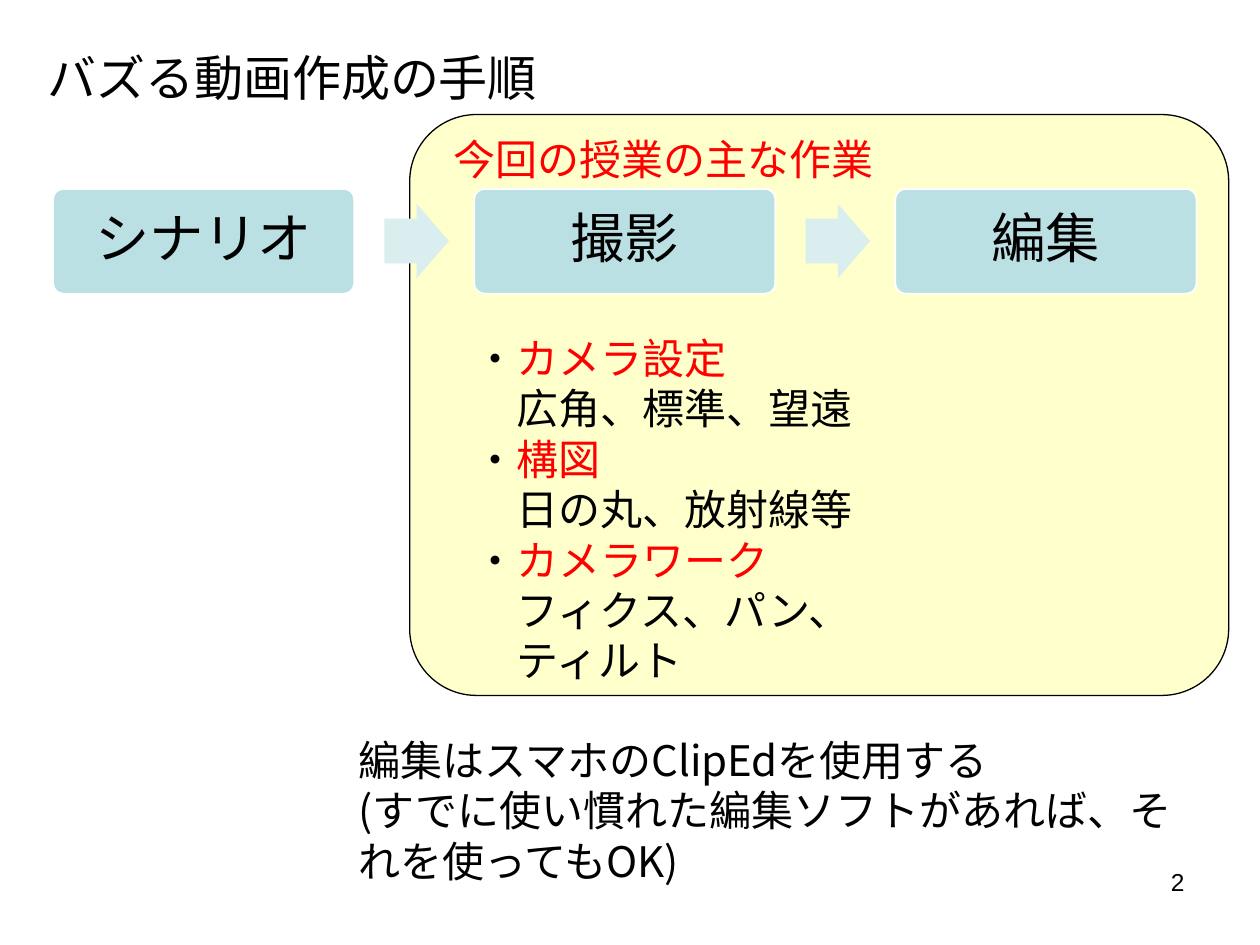
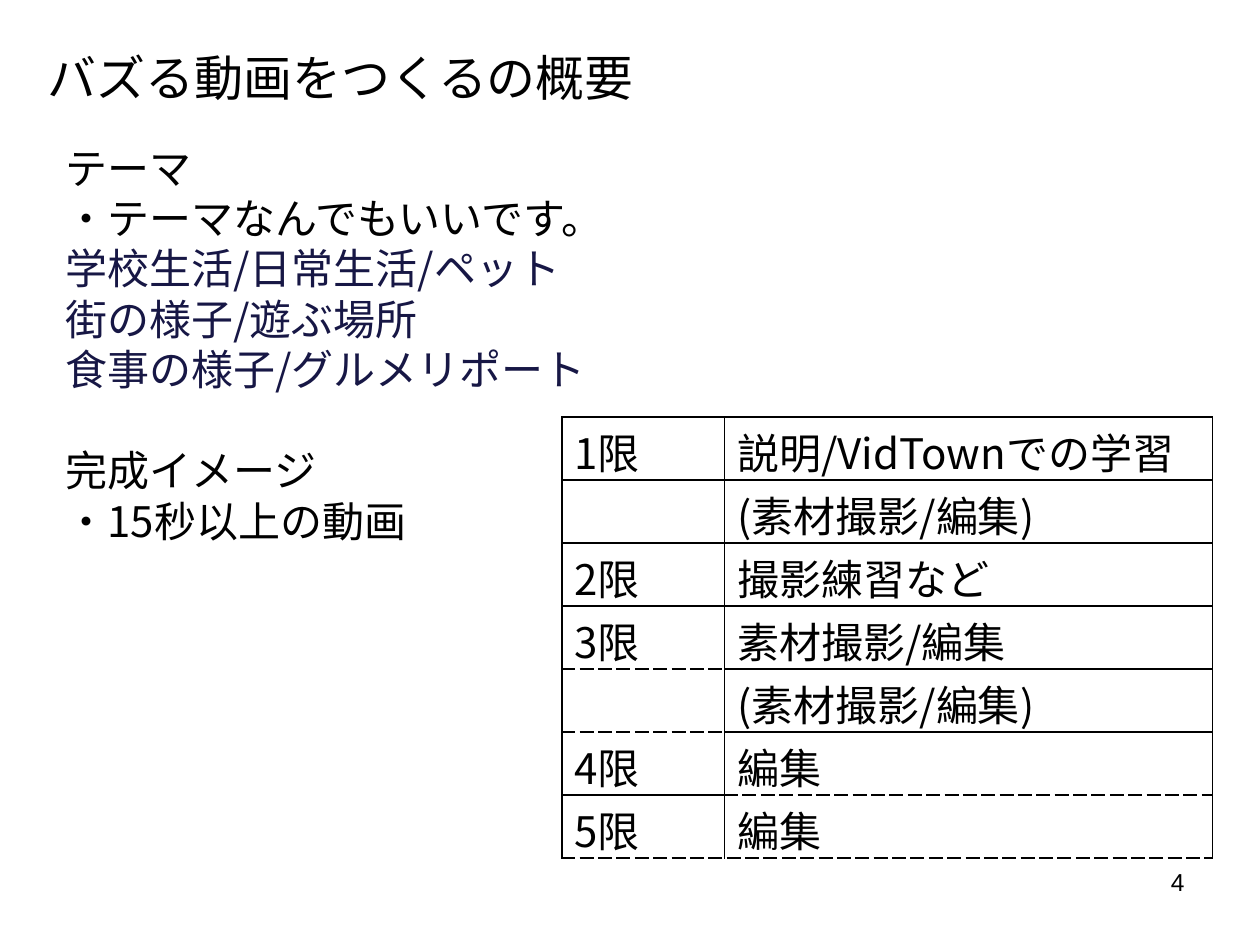
from lxml import etree
from pptx import Presentation
from pptx import util as u
from pptx.dml.color import RGBColor
from pptx.enum import shapes, text
from pptx.oxml import ns

BLACK, RED, NAVY, WHITE = "000000", "FF0000", "171745", "FFFFFF"
CREAM, TEAL, PALE = "FFFFCC", "BBE0E3", "DAEDEF"
SANS, ARIAL = "Noto Sans CJK JP", "Arial"
BODY = {"size": u.Pt(24), "name": SANS}
HEAD = {"size": u.Pt(28), "name": SANS}
STEP = {"size": u.Pt(31), "name": ARIAL}
PAGE = {"size": u.Pt(14), "name": ARIAL}
MID = {"alignment": text.PP_ALIGN.CENTER, "line_spacing": 0.9}
RIGHT = {"alignment": text.PP_ALIGN.RIGHT}
INDENT = u.Cm(0.85)
GAP = {"space_before": u.Pt(29)}


def rgb(code):
    return RGBColor.from_string(code)


def style(item, form):
    for key, value in form.items():
        setattr(item, key, value)


def place(left, top, width, height):
    return [u.Cm(n) for n in (left, top, width, height)]


def add_run(para, words, form, color=BLACK):
    run = para.add_run()
    run.text = words
    style(run.font, form)
    run.font.color.rgb = rgb(color)
    east = etree.SubElement(run.font._element, ns.qn("a:ea"))
    east.set("typeface", SANS)


def write(frame, lines, form, layout=None):
    frame.word_wrap = True
    for i, line in enumerate(lines):
        para = frame.add_paragraph() if i else frame.paragraphs[0]
        line = dict(line) if isinstance(line, dict) else {"runs": [(line,)]}
        if line.pop("indent", False):
            para._p.get_or_add_pPr().set("marL", str(int(INDENT)))
        runs = line.pop("runs")
        style(para, {**(layout or {}), **line})
        for run in runs:
            add_run(para, run[0], form, *run[1:])


def add_box(slide, area, lines, form=BODY, layout=None):
    frame = slide.shapes.add_textbox(*place(*area)).text_frame
    write(frame, lines, form, layout)


def add_block(slide, kind, area, fill, adjust, line=None, weight=1):
    block = slide.shapes.add_shape(kind, *place(*area))
    block.shadow.inherit = False
    block.fill.solid()
    block.fill.fore_color.rgb = rgb(fill)
    for i, value in enumerate(adjust):
        block.adjustments[i] = value
    if line:
        block.line.color.rgb = rgb(line)
        block.line.width = u.Pt(weight)
    else:
        block.line.fill.background()
    return block


def add_flow(slide, steps):
    left, pitch = 1.07, 8.49
    for i, name in enumerate(steps):
        x = left + i * pitch
        step = add_block(slide, shapes.MSO_SHAPE.ROUNDED_RECTANGLE,
                         (x, 3.81, 6.07, 2.11), TEAL, [0.1], WHITE)
        step.text_frame.vertical_anchor = text.MSO_ANCHOR.MIDDLE
        write(step.text_frame, [name], STEP, MID)
        if i < len(steps) - 1:
            add_block(slide, shapes.MSO_SHAPE.RIGHT_ARROW,
                      (x + 6.68, 4.11, 1.3, 1.5), PALE, [0.6, 0.5])


def add_edge(cell, side, dash):
    edge = etree.SubElement(cell._tc.get_or_add_tcPr(), ns.qn("a:ln" + side))
    edge.set("w", str(int(u.Pt(1))))
    fill = etree.SubElement(edge, ns.qn("a:solidFill"))
    etree.SubElement(fill, ns.qn("a:srgbClr")).set("val", BLACK)
    etree.SubElement(edge, ns.qn("a:prstDash")).set("val", dash)


def add_plan(slide, rows, dashed):
    wide, high = (3.28, 9.83), 1.27
    area = place(11.33, 8.41, sum(wide), high * len(rows))
    table = slide.shapes.add_table(len(rows), len(wide), *area).table
    style(table, {"first_row": False, "horz_banding": False})
    for col, width in zip(table.columns, wide):
        col.width = u.Cm(width)
    for r, row in enumerate(rows):
        table.rows[r].height = u.Cm(high)
        for c, words in enumerate(row):
            cell = table.cell(r, c)
            style(cell, {"margin_top": u.Cm(0.08), "margin_bottom": 0,
                         "margin_right": u.Cm(0.1)})
            if words:
                write(cell.text_frame, [words], BODY)
            for side in "LRTB":
                spot = {"T": (r - 1, c), "B": (r, c)}.get(side)
                add_edge(cell, side, "sysDash" if spot in dashed else "solid")
            cell.fill.background()


def add_page(deck, title, number):
    slide = deck.slides.add_slide(deck.slide_layouts[6])
    add_box(slide, (0.71, 0.84, 21.39, 1.45), [title], HEAD)
    add_box(slide, (18.21, 17.35, 5.92, 1.32), [number], PAGE, RIGHT)
    return slide


def add_steps(deck):
    slide = add_page(deck, "バズる動画作成の手順", "2")
    add_block(slide, shapes.MSO_SHAPE.ROUNDED_RECTANGLE,
              (8.26, 2.31, 16.51, 11.71), CREAM, [0.115], BLACK, 0.75)
    add_flow(slide, ["シナリオ", "撮影", "編集"])
    topics = {
        "カメラ設定": ["広角、標準、望遠"],
        "構図": ["日の丸、放射線等"],
        "カメラワーク": ["フィクス、パン、", "ティルト"],
    }
    lines = []
    for topic, items in topics.items():
        lines.append({"runs": [("・",), (topic, RED)]})
        lines += [{"runs": [(item,)], "indent": True} for item in items]
    add_box(slide, (9.32, 6.58, 9.7, 7.44), lines)
    add_box(slide, (8.89, 2.57, 11.4, 1.27),
            [{"runs": [("今回の授業の主な作業", RED)]}])
    add_box(slide, (6.98, 14.68, 17.15, 3.33),
            ["編集はスマホのClipEdを使用する",
             "(すでに使い慣れた編集ソフトがあれば、それを使ってもOK)"])


def add_outline(deck):
    slide = add_page(deck, "バズる動画をつくるの概要", "4")
    themes = ["学校生活/日常生活/ペット", "街の様子/遊ぶ場所",
              "食事の様子/グルメリポート"]
    lines = ["テーマ", "・テーマなんでもいいです。"]
    lines += [{"runs": [(theme, NAVY)]} for theme in themes]
    lines += [{"runs": [("完成イメージ",)], **GAP}, "・15秒以上の動画"]
    add_box(slide, (1.07, 2.74, 23.5, 9.5), lines)
    add_plan(slide, [
        ("1限", "説明/VidTownでの学習"),
        ("", "(素材撮影/編集)"),
        ("2限", "撮影練習など"),
        ("3限", "素材撮影/編集"),
        ("", "(素材撮影/編集)"),
        ("4限", "編集"),
        ("5限", "編集"),
    ], {(3, 0), (4, 0), (5, 1), (6, 0), (6, 1)})


def main():
    deck = Presentation()
    style(deck, {"slide_width": u.Cm(25.4), "slide_height": u.Cm(19.05)})
    add_steps(deck)
    add_outline(deck)
    deck.save("out.pptx")


if __name__ == "__main__":
    main()
